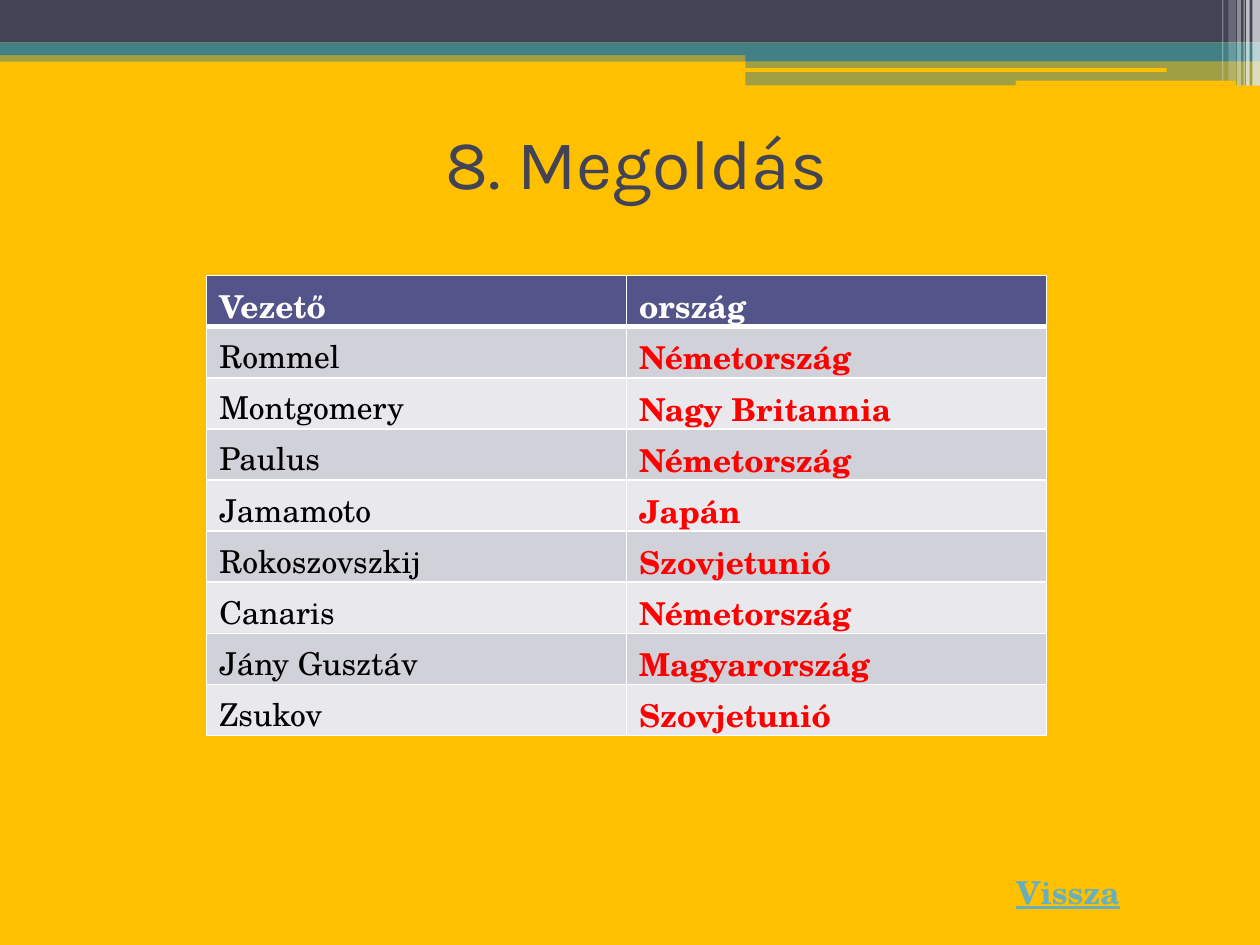
from lxml import etree
from pptx import Presentation
from pptx.dml.color import RGBColor
from pptx.enum.shapes import MSO_SHAPE
from pptx.enum.text import MSO_ANCHOR, MSO_AUTO_SIZE, PP_ALIGN
from pptx.oxml.ns import qn
from pptx.util import Pt

RECT, ROUND = MSO_SHAPE.RECTANGLE, MSO_SHAPE.ROUNDED_RECTANGLE
MIDDLE, CENTER = MSO_ANCHOR.MIDDLE, PP_ALIGN.CENTER
GROW = MSO_AUTO_SIZE.SHAPE_TO_FIT_TEXT

AMBER = RGBColor(0xFF, 0xC0, 0x00)
SLATE = RGBColor(0x42, 0x44, 0x56)
TEAL = RGBColor(0x43, 0x80, 0x86)
WHITE = RGBColor(0xFF, 0xFF, 0xFF)
BLACK = RGBColor(0, 0, 0)
RED = RGBColor(0xFF, 0, 0)
LINK = RGBColor(0x67, 0xAF, 0xBD)
HEADER = RGBColor(0x53, 0x54, 0x8A)
BANDS = (RGBColor(0xD1, 0xD1, 0xDA), RGBColor(0xE9, 0xE9, 0xED))

TITLE_FONT, BODY_FONT = "Karla", "TeX Gyre Schola"

# left, top, width, height, colour, opacity %
BARS = [
    (0, 28.8, 720, 6.5, TEAL, 50),
    (0, 0, 720, 24.3, SLATE, 100),
    (0, 24.3, 720, 7.2, TEAL, 100),
    (426, 28.1, 294, 6.8, TEAL, 100),
    (426, 34.6, 294, 14.2, TEAL, 50),
]
AMBER_STRIPS = [(425.5, 38.9, 241.2, 2.2), (580.3, 46.1, 126, 2.9)]
# left, width, height, opacity %
GLINTS = [
    (715.7, 4.3, 49, 65), (712.1, 2.1, 49, 65), (710.6, 0.7, 49, 60),
    (707, 2.1, 49, 40), (702, 4.3, 46.1, 20), (698.4, 0.7, 46.1, 30),
]
LEADERS = [
    ("Vezető", "ország"),
    ("Rommel", "Németország"),
    ("Montgomery", "Nagy Britannia"),
    ("Paulus", "Németország"),
    ("Jamamoto", "Japán"),
    ("Rokoszovszkij", "Szovjetunió"),
    ("Canaris", "Németország"),
    ("Jány Gusztáv", "Magyarország"),
    ("Zsukov", "Szovjetunió"),
]


class Deck:
    def __init__(self, width, height, background):
        self.prs = Presentation()
        self.prs.slide_width, self.prs.slide_height = Pt(width), Pt(height)
        self.s = self.prs.slides.add_slide(self.prs.slide_layouts[5])
        fill = self.s.background.fill
        fill.solid()
        fill.fore_color.rgb = background

    def text(self, tf, text, color, **style):
        p = tf.paragraphs[0]
        r = p.add_run()
        r.text = text
        values = {"name": BODY_FONT, "size": Pt(18), "bold": False, **style}
        for name, value in values.items():
            setattr(r.font, name, value)
        r.font.color.rgb = color
        return p

    def title(self, x, y, w, h, text):
        sp = self.s.shapes.title
        sp.left, sp.top, sp.width, sp.height = map(Pt, (x, y, w, h))
        sp.text_frame.vertical_anchor = MIDDLE
        p = self.text(sp.text_frame, text, SLATE, name=TITLE_FONT, size=Pt(40))
        p.alignment = CENTER

    def bar(self, x, y, w, h, color, opacity=100, kind=RECT):
        sp = self.s.shapes.add_shape(kind, *map(Pt, (x, y, w, h)))
        sp.shadow.inherit = False
        sp.line.fill.background()
        sp.fill.solid()
        sp.fill.fore_color.rgb = color
        if opacity < 100:
            clr = sp.fill._xPr.find(".//" + qn("a:srgbClr"))
            etree.SubElement(clr, qn("a:alpha"), val=str(opacity * 1000))

    def label(self, x, y, w, h, text, color, **style):
        tf = self.s.shapes.add_textbox(*map(Pt, (x, y, w, h))).text_frame
        tf.word_wrap = False
        tf.auto_size = GROW
        self.text(tf, text, color, **style)

    def border(self, cell, side, width):
        tc_pr = cell._tc.get_or_add_tcPr()
        ln = etree.SubElement(tc_pr, qn("a:ln" + side), w=str(Pt(width)))
        fill = etree.SubElement(ln, qn("a:solidFill"))
        etree.SubElement(fill, qn("a:srgbClr"), val=str(WHITE))

    def table(self, x, y, w, h, rows):
        size = len(rows), len(rows[0])
        table = self.s.shapes.add_table(*size, *map(Pt, (x, y, w, h))).table
        for i, row in enumerate(rows):
            table.rows[i].height = Pt(h / len(rows))
            for j, text in enumerate(row):
                cell = table.cell(i, j)
                # Thick rule between the header and the first row
                widths = {"L": 1, "R": 1, "T": 3 if i == 1 else 1,
                          "B": 3 if i == 0 else 1}
                for side, width in widths.items():
                    self.border(cell, side, width)
                cell.fill.solid()
                cell.fill.fore_color.rgb = BANDS[(i - 1) % 2] if i else HEADER
                color = (BLACK, RED)[j] if i else WHITE
                self.text(cell.text_frame, text, color, bold=i == 0 or j == 1)


def main():
    deck = Deck(720, 540, AMBER)

    # Top decoration
    for bar in BARS:
        deck.bar(*bar)
    for strip in AMBER_STRIPS:
        deck.bar(*strip, AMBER, kind=ROUND)
    for x, w, h, opacity in GLINTS:
        deck.bar(x, 0, w, h, WHITE, opacity)

    # Title, back label and table of leaders
    deck.title(39.6, 50.4, 648, 84.2, "8. Megoldás")
    deck.label(573.8, 495.4, 74.2, 28.8, "Vissza", LINK, bold=True, underline=True)
    deck.table(118.1, 157.5, 480, 263, LEADERS)

    deck.prs.save("out.pptx")


if __name__ == "__main__":
    main()
